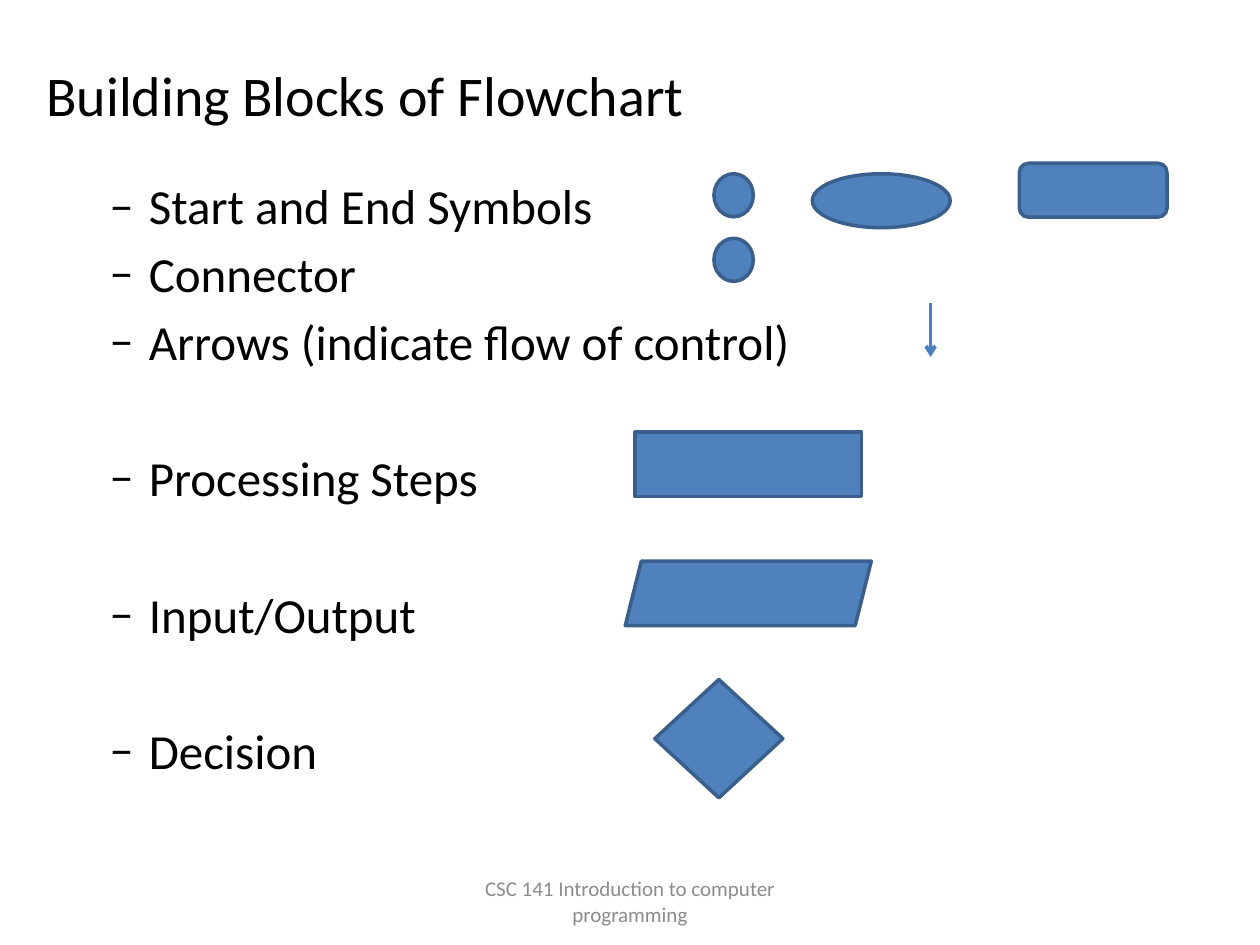
from pptx import Presentation
from pptx.dml.color import RGBColor
from pptx.enum.shapes import MSO_CONNECTOR, MSO_SHAPE
from pptx.enum.text import MSO_ANCHOR, PP_ALIGN
from pptx.oxml.ns import qn
from pptx.util import Pt
from lxml import etree

OVAL = MSO_SHAPE.OVAL
ROUNDED = MSO_SHAPE.ROUNDED_RECTANGLE
RECTANGLE = MSO_SHAPE.RECTANGLE
PARALLELOGRAM = MSO_SHAPE.PARALLELOGRAM
DIAMOND = MSO_SHAPE.DIAMOND
STRAIGHT = MSO_CONNECTOR.STRAIGHT
TOP, MIDDLE = MSO_ANCHOR.TOP, MSO_ANCHOR.MIDDLE
LEFT, CENTER = PP_ALIGN.LEFT, PP_ALIGN.CENTER


def rgb(value):
    return RGBColor.from_string(value)


def write(paragraph, text, size=28, color="000000", font="Calibri", align=LEFT,
          before=0, bullet=None, margin=0, hanging=0):
    paragraph.alignment = align
    paragraph.space_before = Pt(before)
    if bullet:
        properties = paragraph._p.get_or_add_pPr()
        properties.set("marL", str(Pt(margin)))
        properties.set("indent", str(-Pt(hanging)))
        etree.SubElement(properties, qn("a:buFont"), typeface=font)
        etree.SubElement(properties, qn("a:buChar"), char=bullet)
    run = paragraph.add_run()
    run.text = text
    run.font.size = Pt(size)
    run.font.name = font
    run.font.color.rgb = rgb(color)


class FlowchartSlide:
    """Draws text, symbols and arrows on one slide in a shared style."""

    fill = "4F81BD"
    outline = "3A5F8C"
    arrow_color = "4B7EBC"
    line_width = 2

    def __init__(self, slide):
        self.slide = slide

    def frame(self, left, top, width, height, anchor):
        box = self.slide.shapes.add_textbox(Pt(left), Pt(top), Pt(width), Pt(height))
        box.text_frame.word_wrap = True
        box.text_frame.vertical_anchor = anchor
        return box.text_frame

    def text(self, text, left, top, width, height, **style):
        frame = self.frame(left, top, width, height, MIDDLE)
        write(frame.paragraphs[0], text, **style)

    def bullets(self, items, left, top, width, height):
        frame = self.frame(left, top, width, height, TOP)
        for index, (text, before) in enumerate(items):
            paragraph = frame.add_paragraph() if index else frame.paragraphs[0]
            write(paragraph, text, before=before, bullet="–", margin=58.5, hanging=22.5)

    def symbol(self, kind, left, top, width, height):
        shape = self.slide.shapes.add_shape(kind, Pt(left), Pt(top), Pt(width), Pt(height))
        shape.shadow.inherit = False
        shape.fill.solid()
        shape.fill.fore_color.rgb = rgb(self.fill)
        shape.line.color.rgb = rgb(self.outline)
        shape.line.width = Pt(self.line_width)

    def arrow(self, x1, y1, x2, y2):
        connector = self.slide.shapes.add_connector(STRAIGHT, Pt(x1), Pt(y1), Pt(x2), Pt(y2))
        connector.line.color.rgb = rgb(self.arrow_color)
        connector.line.width = Pt(self.line_width)
        etree.SubElement(connector.line._get_or_add_ln(), qn("a:tailEnd"), type="arrow")
        etree.SubElement(connector._element.spPr, qn("a:effectLst"))


def main():
    presentation = Presentation()
    presentation.slide_width, presentation.slide_height = Pt(720), Pt(540)
    page = FlowchartSlide(presentation.slides.add_slide(presentation.slide_layouts[6]))

    page.text("Building Blocks of Flowchart", 19.5, 24, 648, 60, size=32)

    near, far = 5, 44.4
    page.bullets([
        ("Start and End Symbols", 0),
        ("Connector", near),
        ("Arrows (indicate flow of control)", near),
        ("Processing Steps", far),
        ("Input/Output", far),
        ("Decision", far),
    ], 19.5, 97, 648, 345.6)

    for symbol in [
        (OVAL, 408, 99.3, 22.5, 24.6),
        (OVAL, 464.2, 99.3, 78.8, 30.8),
        (ROUNDED, 582.5, 93.3, 84.4, 30.8),
        (RECTANGLE, 363, 247, 129.4, 36.8),
        (PARALLELOGRAM, 357.3, 320.7, 140.6, 36.8),
        (DIAMOND, 374.2, 388.3, 73.2, 67.6),
        (OVAL, 408, 136.2, 22.5, 24.6),
    ]:
        page.symbol(*symbol)
    page.arrow(531.8, 173.2, 531.8, 204)

    page.text("CSC 141 Introduction to computer programming", 246, 500.5, 228, 28.8,
              size=12, color="8C8C8C", align=CENTER)
    presentation.save("out.pptx")


if __name__ == "__main__":
    main()
